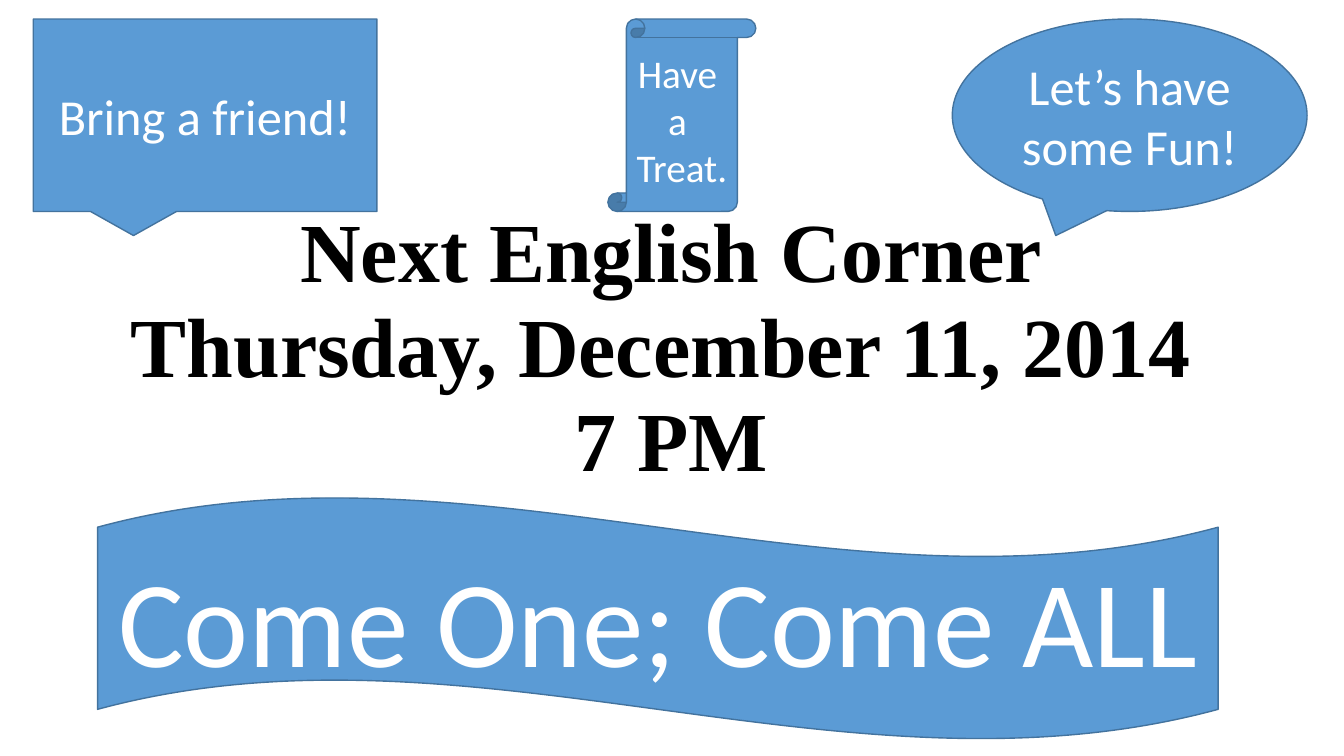
from dataclasses import dataclass

from pptx import Presentation
from pptx.dml.color import RGBColor
from pptx.enum.shapes import MSO_SHAPE
from pptx.enum.text import MSO_ANCHOR, PP_ALIGN
from pptx.util import Cm, Pt


@dataclass(frozen=True)
class Theme:
    fill: RGBColor = RGBColor(0x5B, 0x9B, 0xD5)
    outline: RGBColor = RGBColor(0x43, 0x73, 0x9E)
    light: RGBColor = RGBColor(0xFF, 0xFF, 0xFF)
    dark: RGBColor = RGBColor(0, 0, 0)
    body_font: str = "Calibri"
    title_font: str = "Times New Roman"
    scroll_size: int = 28
    callout_size: int = 36
    title_size: int = 60
    banner_size: int = 88


THEME = Theme()
TOP_ROW = 0.48
TOP_HEIGHT = 4.85


def add_span(para, text, font, size, color, bold=False):
    span = para.add_run()
    span.text = text
    span.font.name = font
    span.font.size = Pt(size)
    span.font.color.rgb = color
    span.font.bold = bold


def prepare_frame(shape):
    frame = shape.text_frame
    frame.word_wrap = True
    frame.vertical_anchor = MSO_ANCHOR.MIDDLE
    return frame


def add_title(page, lines):
    box = page.shapes.add_textbox(Cm(2.31), Cm(7.9), Cm(29.21), Cm(3.68))
    frame = prepare_frame(box)
    frame.margin_bottom = Cm(2.03)
    para = frame.paragraphs[0]
    para.alignment = PP_ALIGN.CENTER
    para.line_spacing = 0.94
    for index, line in enumerate(lines):
        if index:
            para.add_line_break()
        add_span(para, line, THEME.title_font, THEME.title_size, THEME.dark, True)


def add_sign(page, kind, left, top, width, height, lines, size):
    sign = page.shapes.add_shape(kind, Cm(left), Cm(top), Cm(width), Cm(height))
    sign.shadow.inherit = False
    sign.fill.solid()
    sign.fill.fore_color.rgb = THEME.fill
    sign.line.color.rgb = THEME.outline
    sign.line.width = Pt(1)
    frame = prepare_frame(sign)
    for index, line in enumerate(lines):
        para = frame.add_paragraph() if index else frame.paragraphs[0]
        para.alignment = PP_ALIGN.CENTER
        add_span(para, line, THEME.body_font, size, THEME.light)


def main():
    deck = Presentation()
    deck.slide_width, deck.slide_height = Cm(33.87), Cm(19.05)
    page = deck.slides.add_slide(deck.slide_layouts[6])

    add_title(page, ["Next English Corner", "Thursday, December 11, 2014 ", "7 PM"])
    add_sign(page, MSO_SHAPE.OVAL_CALLOUT, 24, TOP_ROW, 8.94, TOP_HEIGHT,
             ["Let’s have some Fun!"], THEME.callout_size)
    add_sign(page, MSO_SHAPE.RECTANGULAR_CALLOUT, 0.84, TOP_ROW, 8.66, TOP_HEIGHT,
             ["Bring a friend!"], THEME.callout_size)
    add_sign(page, MSO_SHAPE.WAVE, 2.46, 12.52, 28.24, 6.12,
             ["Come One; Come ALL"], THEME.banner_size)
    add_sign(page, MSO_SHAPE.VERTICAL_SCROLL, 15.32, TOP_ROW, 3.73, TOP_HEIGHT,
             ["Have ", "a ", "Treat."], THEME.scroll_size)

    deck.save("out.pptx")


if __name__ == "__main__":
    main()
